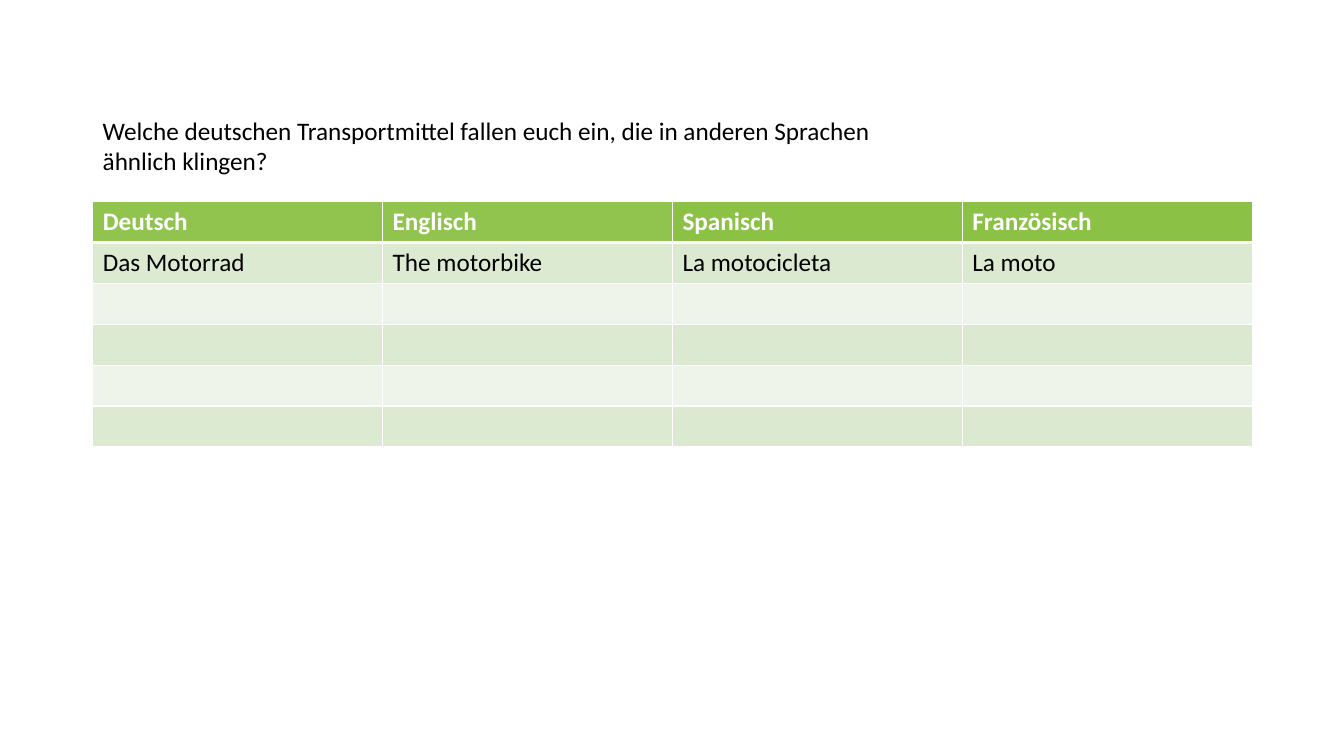
"""Build a vocabulary slide comparing German vehicle names with other languages."""
from dataclasses import dataclass

from lxml.etree import SubElement
from pptx import Presentation
from pptx.dml.color import RGBColor
from pptx.enum.text import MSO_ANCHOR
from pptx.oxml.ns import qn
from pptx.slide import Slide
from pptx.table import _Cell as Cell
from pptx.text.text import _Paragraph as Paragraph
from pptx.util import Inches, Pt

WHITE = "FFFFFF"
BLACK = "000000"
QUESTION = (
    "Welche deutschen Transportmittel fallen euch ein, "
    "die in anderen Sprachen ähnlich klingen?"
)
TRANSLUCENT_COLUMNS = 2
OPACITY = 94


@dataclass(frozen=True)
class VocabularyRow:
    words: tuple[str, ...]
    fill: str
    color: str = BLACK
    bold: bool = False
    top_border: float = 1
    bottom_border: float = 1


DARK_BAND, LIGHT_BAND = "DAE9CF", "EEF4E9"
EMPTY_WORDS = ("",) * 4
VOCABULARY = [
    VocabularyRow(("Deutsch", "Englisch", "Spanisch", "Französisch"),
                  "8BC145", WHITE, bold=True, bottom_border=3),
    VocabularyRow(("Das Motorrad", "The motorbike", "La motocicleta", "La moto"),
                  DARK_BAND, top_border=3),
    *(VocabularyRow(EMPTY_WORDS, fill)
      for fill in (LIGHT_BAND, DARK_BAND, LIGHT_BAND, DARK_BAND)),
]


def rgb(value: str) -> RGBColor:
    return RGBColor.from_string(value)


def format_text(paragraph: Paragraph, color: str, bold: bool = False) -> None:
    font = paragraph.font
    for name, value in {"name": "Calibri", "size": Pt(18), "bold": bold}.items():
        setattr(font, name, value)
    font.color.rgb = rgb(color)
    for run in paragraph.runs:
        for name, value in {"name": "Calibri", "size": Pt(18), "bold": bold}.items():
            setattr(run.font, name, value)
        run.font.color.rgb = rgb(color)


def draw_borders(cell: Cell, row: VocabularyRow) -> None:
    properties = cell._tc.get_or_add_tcPr()
    widths = {"lnL": 1, "lnR": 1, "lnT": row.top_border, "lnB": row.bottom_border}
    for position, (side, width) in enumerate(widths.items()):
        line = SubElement(properties, qn(f"a:{side}"), w=str(Pt(width)))
        fill = SubElement(line, qn("a:solidFill"))
        SubElement(fill, qn("a:srgbClr"), val=WHITE)
        properties.insert(position, line)


def fill_cell(cell: Cell, color: str, translucent: bool) -> None:
    cell.fill.solid()
    cell.fill.fore_color.rgb = rgb(color)
    if translucent:
        fill_color = cell._tc.tcPr.find(f".//{qn('a:srgbClr')}")
        SubElement(fill_color, qn("a:alpha"), val=str(OPACITY * 1000))


def add_vocabulary_table(slide: Slide, rows: list[VocabularyRow]) -> None:
    frame = slide.shapes.add_table(
        len(rows), len(rows[0].words),
        Inches(0.92), Inches(2), Inches(11.5), Inches(2.43))
    for row_index, row in enumerate(rows):
        for column, word in enumerate(row.words):
            cell = frame.table.cell(row_index, column)
            paragraph = cell.text_frame.paragraphs[0]
            if word:
                paragraph.text = word
            format_text(paragraph, row.color, row.bold)
            fill_cell(cell, row.fill, column < TRANSLUCENT_COLUMNS)
            draw_borders(cell, row)


def add_question(slide: Slide, question: str) -> None:
    box = slide.shapes.add_textbox(
        Inches(0.92), Inches(0.78), Inches(7.95), Inches(1.01))
    text_frame = box.text_frame
    settings = {"word_wrap": True, "vertical_anchor": MSO_ANCHOR.BOTTOM}
    for name, value in settings.items():
        setattr(text_frame, name, value)
    paragraph = text_frame.paragraphs[0]
    paragraph.text = question
    format_text(paragraph, BLACK)


def main() -> None:
    presentation = Presentation()
    presentation.slide_width = Inches(13.33)
    presentation.slide_height = Inches(7.5)
    slide = presentation.slides.add_slide(presentation.slide_layouts[6])
    add_vocabulary_table(slide, VOCABULARY)
    add_question(slide, QUESTION)
    presentation.save("out.pptx")


if __name__ == "__main__":
    main()
